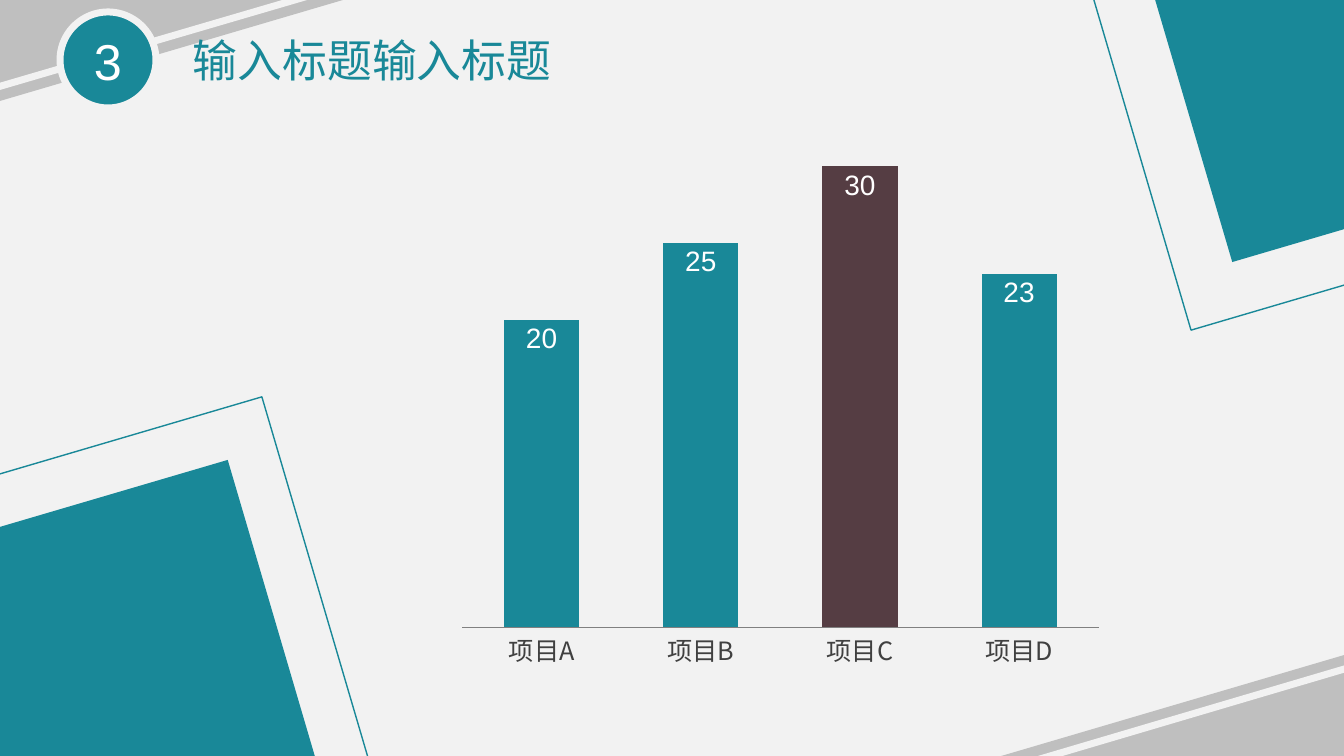
from lxml.etree import SubElement
from pptx import Presentation
from pptx.chart.data import CategoryChartData
from pptx.dml.color import RGBColor
from pptx.enum.chart import XL_CHART_TYPE, XL_LABEL_POSITION, XL_TICK_LABEL_POSITION, XL_TICK_MARK
from pptx.enum.shapes import MSO_CONNECTOR, MSO_SHAPE
from pptx.enum.text import MSO_ANCHOR, PP_ALIGN
from pptx.oxml.ns import qn
from pptx.util import Pt

TEAL = RGBColor(0x19, 0x88, 0x98)
PLUM = RGBColor(0x55, 0x3D, 0x43)
PAPER = RGBColor(0xF2, 0xF2, 0xF2)
SILVER = RGBColor(0xBF, 0xBF, 0xBF)
GRAY = RGBColor(0x80, 0x80, 0x80)
DARK = RGBColor(0x40, 0x40, 0x40)
BLACK = RGBColor(0, 0, 0)
WHITE = RGBColor(0xFF, 0xFF, 0xFF)


class Deck:
    """Draws styled elements on the current slide, with lengths in px."""

    SCALE = 914400 / 100.8
    LATIN, BODY, CJK = "Arial", "Calibri", "Noto Sans CJK SC"
    TILT = 343.6

    def __init__(self, width, height):
        self.prs = Presentation()
        self.prs.slide_width, self.prs.slide_height = self.emu(width, height)
        self.s = self.prs.slides.add_slide(self.prs.slide_layouts[6])
        fill = self.s.background.fill
        fill.solid()
        fill.fore_color.rgb = PAPER

    def emu(self, *lengths):
        return [round(n * self.SCALE) for n in lengths]

    def font(self, font, size, color, name):
        font.size, font.name = Pt(size), name
        font.color.rgb = color

    def shape(self, kind, x, y, w, h, fill=None, line=None, weight=1, rotation=0):
        sp = self.s.shapes.add_shape(kind, *self.emu(x, y, w, h))
        sp.shadow.inherit = False
        sp.rotation = rotation
        if fill is None:
            sp.fill.background()
        else:
            sp.fill.solid()
            sp.fill.fore_color.rgb = fill
        if line is None:
            sp.line.fill.background()
        else:
            sp.line.color.rgb = line
            sp.line.width = Pt(weight)
        return sp

    def square(self, x, y, side, **style):
        self.shape(MSO_SHAPE.RECTANGLE, x, y, side, side, rotation=self.TILT, **style)

    def corner(self, x, y, w, h, rotation=0):
        sp = self.shape(MSO_SHAPE.RIGHT_TRIANGLE, x, y, w, h, fill=SILVER, rotation=rotation)
        sp._element.spPr.find(qn("a:xfrm")).set("flipV", "1")

    def stripe(self, x1, y1, x2, y2):
        line = self.s.shapes.add_connector(MSO_CONNECTOR.STRAIGHT, *self.emu(x1, y1, x2, y2))
        line.line.color.rgb = PAPER
        line.line.width = Pt(5)
        SubElement(line._element.spPr, qn("a:effectLst"))

    def run(self, tf, text, size, color, name):
        r = tf.paragraphs[0].add_run()
        r.text = text
        self.font(r.font, size, color, name)
        return r

    def badge(self, x, y, size, text):
        sp = self.shape(MSO_SHAPE.OVAL, x, y, size, size, fill=TEAL, line=PAPER, weight=5)
        tf = sp.text_frame
        tf.vertical_anchor = MSO_ANCHOR.MIDDLE
        tf.paragraphs[0].alignment = PP_ALIGN.CENTER
        self.run(tf, text, 36, WHITE, self.LATIN)

    def title(self, x, y, w, h, text):
        tf = self.s.shapes.add_textbox(*self.emu(x, y, w, h)).text_frame
        tf.word_wrap = True
        r = self.run(tf, text, 32, TEAL, self.BODY)
        SubElement(r.font._element, qn("a:ea")).set("typeface", self.CJK)

    def columns(self, x, y, w, h, values, top, highlight):
        data = CategoryChartData()
        data.categories = list(values)
        data.add_series("Series 1", list(values.values()))
        frame = self.s.shapes.add_chart(
            XL_CHART_TYPE.COLUMN_CLUSTERED, *self.emu(x, y, w, h), data)
        chart = frame.chart
        chart.has_legend = chart.has_title = False
        self.font(chart.font, 18, BLACK, self.BODY)

        axis = chart.category_axis
        axis.major_tick_mark = XL_TICK_MARK.NONE
        axis.format.line.color.rgb = GRAY
        axis.format.line.width = Pt(0.75)
        self.font(axis.tick_labels.font, 18, DARK, self.CJK)

        axis = chart.value_axis
        axis.minimum_scale, axis.maximum_scale = 0, top
        axis.has_major_gridlines = False
        axis.major_tick_mark = XL_TICK_MARK.NONE
        axis.tick_label_position = XL_TICK_LABEL_POSITION.NONE
        axis.format.line.fill.background()

        plot = chart.plots[0]
        plot.gap_width = 112
        plot.vary_by_categories = False
        series = plot.series[0]
        point = series.points[list(values).index(highlight)]
        for part, color in ((series, TEAL), (point, PLUM)):
            part.format.fill.solid()
            part.format.fill.fore_color.rgb = color
        labels = series.data_labels
        labels.show_value = True
        labels.position = XL_LABEL_POSITION.INSIDE_END
        self.font(labels.font, 20, WHITE, self.LATIN)


def main():
    deck = Deck(1344, 756)
    deck.corner(0, 0, 343, 101)
    deck.stripe(455, -47, -16, 91)
    deck.badge(60, 12, 96, "3")
    deck.corner(1001, 655, 343, 101, rotation=180)
    deck.stripe(986, 775, 1456, 636)
    deck.title(183, 28, 574, 65, "输入标题输入标题")
    for x, y, frame_x, frame_y in ((-127, 511, -232, 468), (1164, -212, 1096, -330)):
        deck.square(x, y, 423, fill=TEAL)
        deck.square(frame_x, frame_y, 589, line=TEAL)
    deck.columns(449, 77, 663, 603, {"项目A": 20, "项目B": 25, "项目C": 30, "项目D": 23},
                 top=35, highlight="项目C")
    deck.prs.save("out.pptx")


if __name__ == "__main__":
    main()
